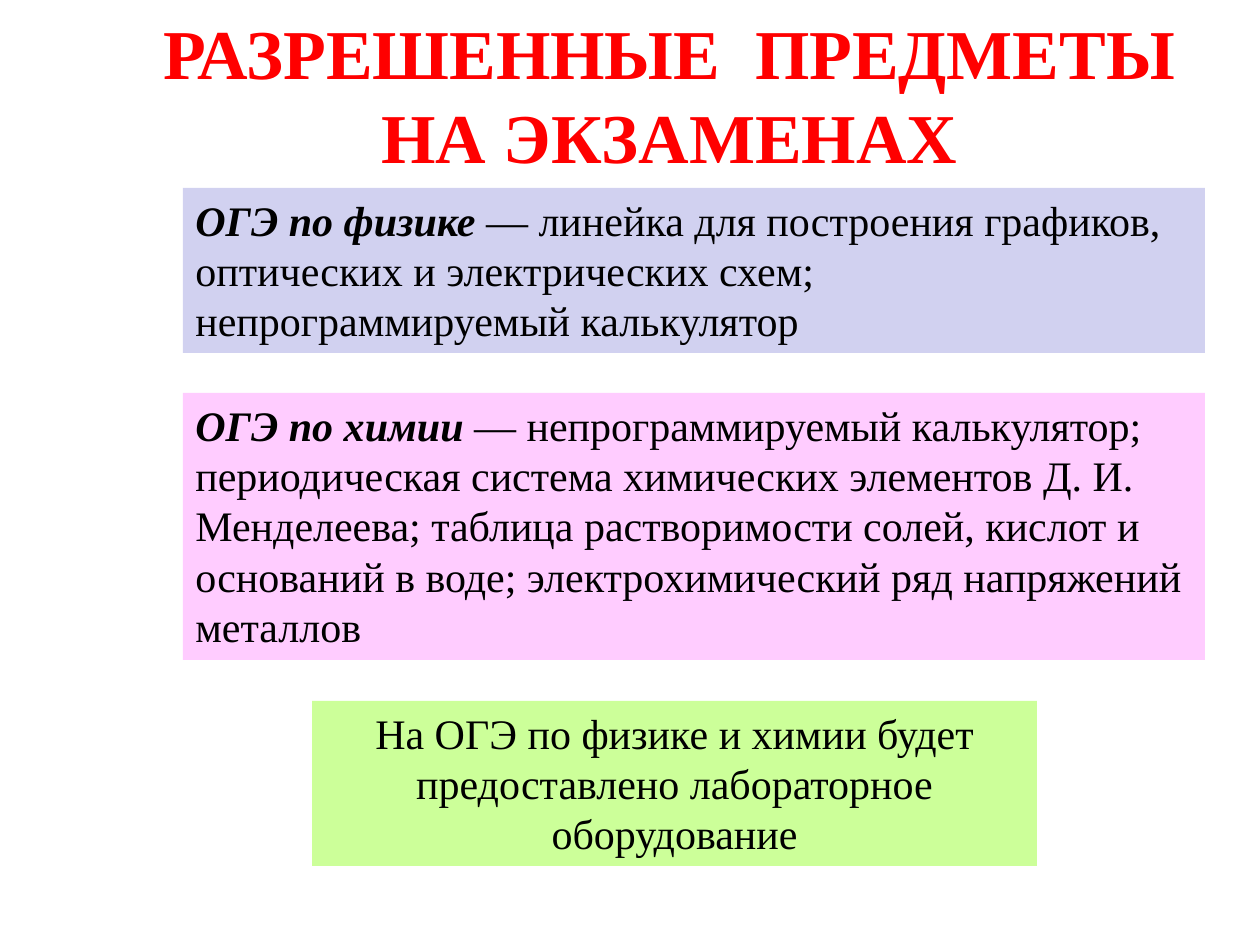
"""Build the slide listing items allowed at the physics and chemistry exams."""
from dataclasses import dataclass

from pptx import Presentation
from pptx.dml.color import RGBColor as RGB
from pptx.enum.text import MSO_ANCHOR as Anchor, PP_ALIGN as Align
from pptx.util import Inches, Pt


@dataclass(frozen=True)
class Theme:
    font: str = "Times New Roman"
    title_size: int = 40
    body_size: int = 24
    title_ink: str = "FF0000"
    body_ink: str = "000000"
    physics: str = "D1D1F0"
    chemistry: str = "FFCCFF"
    equipment: str = "CCFF99"


theme = Theme()
PX = Inches(1) / 126


def add_panel(place, runs, align, size, ink, fill=None):
    panel = slide.shapes.add_textbox(*(round(length * PX) for length in place))
    if fill:
        panel.fill.solid()
        panel.fill.fore_color.rgb = RGB.from_string(fill)
    frame = panel.text_frame
    frame.word_wrap = True
    frame.vertical_anchor = Anchor.TOP if fill else Anchor.MIDDLE
    paragraph = frame.paragraphs[0]
    paragraph.alignment = align
    for words, bold, italic in runs:
        run = paragraph.add_run()
        run.text = words
        run.font.name = theme.font
        run.font.size = Pt(size)
        run.font.bold = bold
        run.font.italic = italic
        run.font.color.rgb = RGB.from_string(ink)


deck = Presentation()
deck.slide_width, deck.slide_height = Inches(10), Inches(7.5)
slide = deck.slides.add_slide(deck.slide_layouts[6])

add_panel((134, 0, 1071, 188), [("РАЗРЕШЕННЫЕ  ПРЕДМЕТЫ НА ЭКЗАМЕНАХ", True, False)],
          Align.CENTER, theme.title_size, theme.title_ink)

rules = [
    ((183, 188, 1022, 165), theme.physics, Align.LEFT, [
        ("ОГЭ по физике", True, True),
        (" — линейка для построения графиков, оптических и электрических схем; "
         "непрограммируемый калькулятор", False, False)]),
    ((183, 393, 1022, 267), theme.chemistry, Align.LEFT, [
        ("ОГЭ по химии ", True, True),
        ("— непрограммируемый калькулятор; периодическая система химических "
         "элементов Д. И. Менделеева; таблица растворимости солей, кислот "
         "и оснований в воде; электрохимический ряд напряжений металлов", False, False)]),
    ((312, 701, 725, 165), theme.equipment, Align.CENTER, [
        ("На ОГЭ по физике и химии будет предоставлено лабораторное оборудование",
         False, False)]),
]
for place, fill, align, runs in rules:
    add_panel(place, runs, align, theme.body_size, theme.body_ink, fill)

deck.save("out.pptx")
